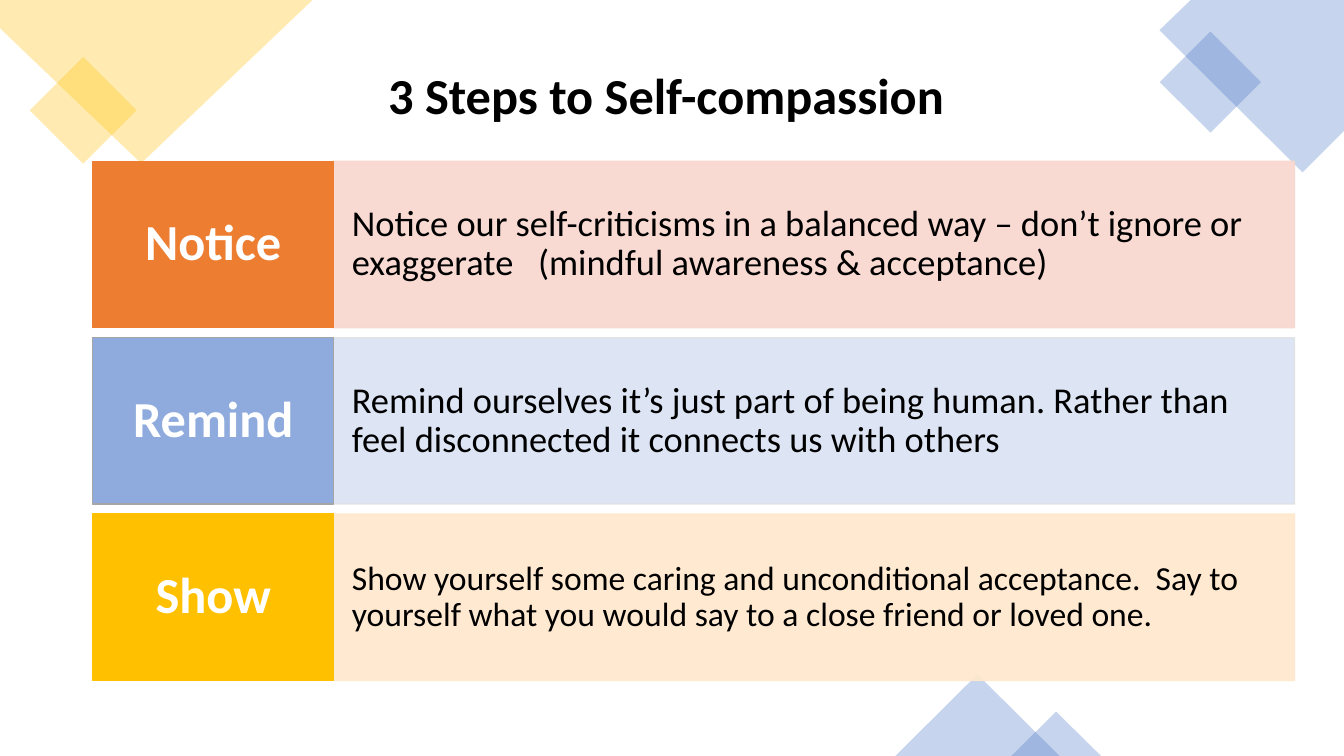
"""Build the "3 Steps to Self-compassion" slide."""
import dataclasses

import pptx
import pptx.dml.color
import pptx.enum.shapes
import pptx.enum.text
import pptx.oxml
import pptx.oxml.ns
import pptx.util

Inches = pptx.util.Inches
Shape = pptx.enum.shapes.MSO_SHAPE
Align = pptx.enum.text.PP_ALIGN


@dataclasses.dataclass(frozen=True)
class Theme:
    font: str = "Calibri"
    heading_size: int = 36
    body_size: int = 26
    small_size: int = 24
    black: str = "000000"
    white: str = "FFFFFF"
    gold: str = "FFC000"
    blue: str = "4472C4"
    orange: str = "ED7D31"
    sky: str = "8FAADC"
    gray: str = "A5A5A5"
    pale_orange: str = "F8D7CE"
    pale_blue: str = "DAE3F3"
    pale_gray: str = "E1E1E1"
    pale_gold: str = "FFE8CC"


theme = Theme()


def paint(shape, fill, opacity, line=None):
    """Fill and outline a shape, with the opacity in percent."""
    shape.shadow.inherit = False
    shape.fill.solid()
    shape.fill.fore_color.rgb = pptx.dml.color.RGBColor.from_string(fill)
    if line:
        shape.line.color.rgb = pptx.dml.color.RGBColor.from_string(line)
        shape.line.width = pptx.util.Pt(1)
    else:
        shape.line.fill.background()
    if opacity < 100:
        for color in shape.element.spPr.xpath(".//a:solidFill/a:srgbClr"):
            alpha = pptx.oxml.parse_xml(f'<a:alpha {pptx.oxml.ns.nsdecls("a")} val="{opacity * 1000}"/>')
            color.append(alpha)


def write(shape, text, size, color, bold, align, margin):
    """Write one vertically centred paragraph into a shape."""
    frame = shape.text_frame
    frame.word_wrap = True
    frame.auto_size = pptx.enum.text.MSO_AUTO_SIZE.NONE
    frame.vertical_anchor = pptx.enum.text.MSO_ANCHOR.MIDDLE
    frame.margin_left = frame.margin_right = Inches(margin)
    para = frame.paragraphs[0]
    para.alignment = align
    para.line_spacing = 0.9
    span = para.add_run()
    span.text = text
    span.font.name = theme.font
    span.font.size = pptx.util.Pt(size)
    span.font.bold = bold
    span.font.color.rgb = pptx.dml.color.RGBColor.from_string(color)


deck = pptx.Presentation()
deck.slide_width, deck.slide_height = Inches(13.33), Inches(7.5)
page = deck.slides.add_slide(deck.slide_layouts[5])

title = page.shapes.title
title.left, title.top, title.width, title.height = map(Inches, (0.7, 0.35, 11.93, 1.24))
write(title, "3 Steps to Self-compassion ", theme.heading_size, theme.black, True, Align.CENTER, 0.1)

corners = [
    (theme.gold, [(0, 0), (3.1, 0), (1.4, 1.62), (0, 0.28)]),
    (theme.blue, [(11.81, 0), (13.33, 0), (13.33, 1.3), (12.92, 1.71), (11.5, 0.3)]),
]
for color, points in corners:
    start, *others = [(Inches(x), Inches(y)) for x, y in points]
    outline = page.shapes.build_freeform(*start)
    outline.add_line_segments(others, close=True)
    paint(outline.convert_to_shape(), color, 30)

accents = [
    (Shape.RECTANGLE, 45, theme.gold, (0.45, 0.72, 0.75, 0.75)),
    (Shape.RECTANGLE, 45, theme.blue, (11.65, 0.46, 0.71, 0.71)),
    (Shape.ISOSCELES_TRIANGLE, 0, theme.blue, (8.88, 6.69, 1.63, 0.81)),
    (Shape.ISOSCELES_TRIANGLE, 0, theme.blue, (10.03, 7.06, 0.89, 0.44)),
]
for kind, angle, color, place in accents:
    accent = page.shapes.add_shape(kind, *map(Inches, place))
    accent.rotation = angle
    paint(accent, color, 30)

steps = [
    ("Notice", theme.orange, theme.orange, theme.pale_orange, theme.pale_orange, theme.body_size,
     "Notice our self-criticisms in a balanced way – don’t ignore or exaggerate   "
     "(mindful awareness & acceptance)"),
    ("Remind", theme.sky, theme.gray, theme.pale_blue, theme.pale_gray, theme.body_size,
     "Remind ourselves it’s just part of being human. Rather than feel disconnected "
     "it connects us with others"),
    ("Show", theme.gold, theme.gold, theme.pale_gold, theme.pale_gold, theme.small_size,
     "Show yourself some caring and unconditional acceptance.  Say to yourself what "
     "you would say to a close friend or loved one."),
]
for row, (name, fill, line, pale_fill, pale_line, size, advice) in enumerate(steps):
    top, height = Inches(1.6 + 1.75 * row), Inches(1.65)
    panel = page.shapes.add_shape(Shape.RECTANGLE, Inches(3.3), top, Inches(9.54), height)
    paint(panel, pale_fill, 90, pale_line)
    write(panel, advice, size, theme.black, False, Align.LEFT, 0.19)
    label = page.shapes.add_shape(Shape.RECTANGLE, Inches(0.92), top, Inches(2.39), height)
    paint(label, fill, 100, line)
    write(label, name, theme.heading_size, theme.white, True, Align.CENTER, 0.13)

deck.save("out.pptx")
